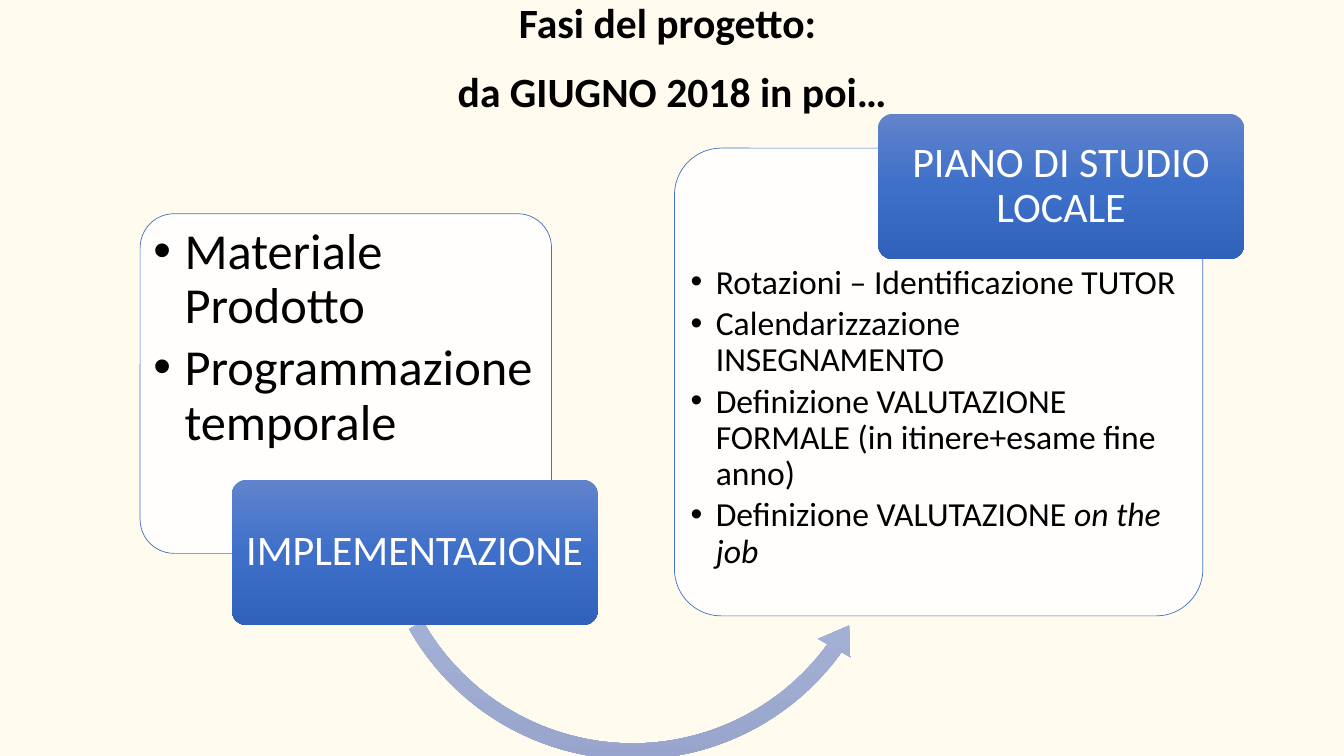
import copy
from pptx import Presentation
from pptx import util as u
from pptx.dml.color import RGBColor
from pptx.enum import shapes, text
from pptx.oxml.ns import qn
from lxml import etree

# Content: boxes are left, top, width, height in percent of the slide
TITLE = ["Fasi del progetto: ", "da GIUGNO 2018 in poi…"]
HEAD = (6.9, 0.27, 86.27, 19.33)
ARROW = (27.16, 31.07, 39.83, 70.8)
BENDS = (0.03, 3.7, 21.49, 90.28, 0.035)
TAG = (27.23, 19.2)
PHASES = [
    dict(name="IMPLEMENTAZIONE", tag=(17.25, 63.47),
         panel=(10.43, 28.27, 30.61, 44.93),
         list=(11.03, 29.2, 29.48, 33.2), size=36, hang=0.31,
         items=[["Materiale Prodotto"], ["Programmazione temporale"]]),
    dict(name="PIANO DI STUDIO LOCALE", tag=(65.34, 15.07),
         panel=(50.19, 19.6, 39.31, 61.87),
         list=(51.01, 34.4, 37.73, 45.73), size=24, hang=0.25,
         items=[["Rotazioni – Identificazione TUTOR"],
                ["Calendarizzazione INSEGNAMENTO"],
                ["Definizione VALUTAZIONE FORMALE (in itinere+esame fine anno)"],
                ["Definizione VALUTAZIONE ", "on the job"]]),
]


class Theme:
    font = "Calibri"
    back, ink, white, edge = "FFFBEF", "000000", "FFFFFF", "4472C4"
    blue = ("6183CB", "3E70CA", "3062BB")
    pale = ("BBC5E3", "AEBBE0", "98A4CB")
    head, tag = 29.7, 30


deck = Presentation()
deck.slide_width, deck.slide_height = u.Inches(13.33), u.Inches(7.5)
slide = deck.slides.add_slide(deck.slide_layouts[3])
slide.background.fill.solid()
slide.background.fill.fore_color.rgb = RGBColor.from_string(Theme.back)


def place(box):
    """Turn percent shares into slide lengths."""
    sides = (deck.slide_width, deck.slide_height) * 2
    return [int(side * part / 100) for side, part in zip(sides, box)]


def move(shape, box):
    shape.left, shape.top, shape.width, shape.height = place(box)


def draw(kind, box, bends):
    shape = slide.shapes.add_shape(kind, *place(box))
    shape.shadow.inherit = False
    for i, bend in enumerate(bends):
        shape.adjustments[i] = bend
    shape.line.fill.background()
    return shape


def shade(shape, hues):
    """Fill from top to bottom with three evenly spaced stops."""
    shape.fill.gradient()
    shape.fill.gradient_angle = 270
    stops = shape.element.spPr.find(".//" + qn("a:gsLst"))
    stops.insert(1, copy.deepcopy(stops[0]))
    for i, (stop, hue) in enumerate(zip(shape.fill.gradient_stops, hues)):
        stop.position = i / 2
        stop.color.rgb = RGBColor.from_string(hue)


def frame(shape, anchor, pads):
    body = shape.text_frame
    body.word_wrap = True
    body.auto_size = text.MSO_AUTO_SIZE.NONE
    body.vertical_anchor = anchor
    (body.margin_left, body.margin_top,
     body.margin_right, body.margin_bottom) = map(u.Inches, pads)
    return body


def write(body, paras, size, hue, align, lead, after=0, bold=False):
    """Write paragraphs run by run; a second run is italic."""
    for i, runs in enumerate(paras):
        para = body.paragraphs[0] if i == 0 else body.add_paragraph()
        para.alignment, para.line_spacing = align, lead
        para.space_before, para.space_after = u.Pt(0), u.Pt(after)
        for j, words in enumerate(runs):
            run = para.add_run()
            run.text = words
            font = run.font
            font.name, font.size = Theme.font, u.Pt(size)
            font.bold, font.italic = bold, j > 0
            font.color.rgb = RGBColor.from_string(hue)


# Title
title, *lists = slide.placeholders
move(title, HEAD)
body = frame(title, text.MSO_ANCHOR.TOP, (0.1, 0.08, 0.1, 0.05))
write(body, [[line] for line in TITLE], Theme.head, Theme.ink,
      text.PP_ALIGN.CENTER, 0.7, 24.5, True)

# Panels with their lists
ROUND = shapes.MSO_SHAPE.ROUNDED_RECTANGLE
for phase, item in zip(PHASES, lists):
    panel = draw(ROUND, phase["panel"], [0.1])
    panel.fill.solid()
    panel.fill.fore_color.rgb = RGBColor.from_string(Theme.white)
    tint = panel.element.spPr.find(qn("a:solidFill"))[0]
    etree.SubElement(tint, qn("a:alpha")).set("val", "90000")
    panel.line.color.rgb = RGBColor.from_string(Theme.edge)
    panel.line.width = u.Pt(0.5)

    slide.shapes.element.append(item.element)  # bring the list in front
    move(item, phase["list"])
    body = frame(item, text.MSO_ANCHOR.TOP, [0.05] * 4)
    write(body, phase["items"], phase["size"], Theme.ink,
          text.PP_ALIGN.LEFT, 0.9, phase["size"] * 0.15)
    for para in body.paragraphs:
        props = para._p.get_or_add_pPr()
        props.set("marL", str(u.Inches(phase["hang"])))
        props.set("indent", str(-u.Inches(phase["hang"])))
        etree.SubElement(props, qn("a:buChar")).set("char", "•")

# Arrow from the first phase to the second
shade(draw(shapes.MSO_SHAPE.LEFT_CIRCULAR_ARROW, ARROW, BENDS), Theme.pale)

# Phase names
for phase in PHASES:
    tag = draw(ROUND, phase["tag"] + TAG, [0.1])
    shade(tag, Theme.blue)
    body = frame(tag, text.MSO_ANCHOR.MIDDLE, (0.06, 0.04, 0.06, 0.04))
    write(body, [[phase["name"]]], Theme.tag, Theme.white,
          text.PP_ALIGN.CENTER, 0.9)

deck.save("out.pptx")
